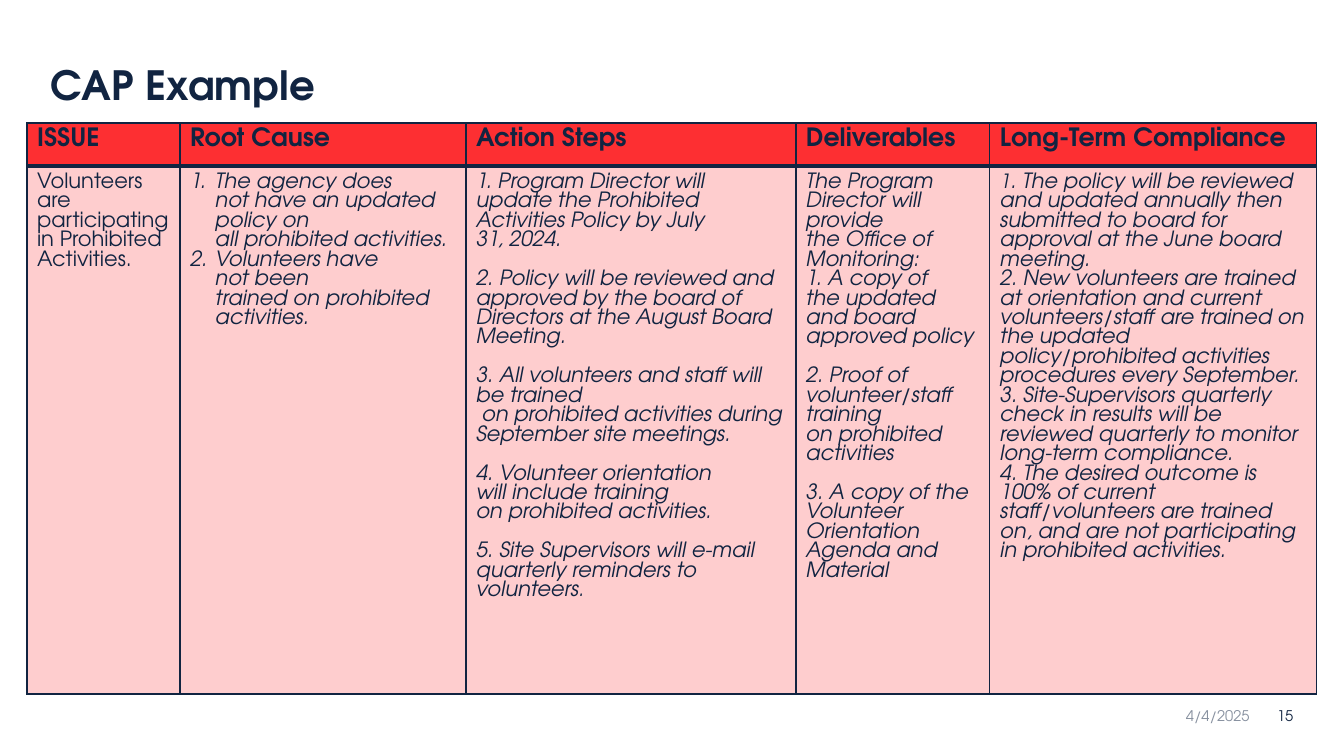
from lxml import etree
from pptx import Presentation
from pptx import util as u
from pptx.dml.color import RGBColor
from pptx.enum import text
from pptx.oxml.ns import qn

PX = 12192000 / 1344
FONT = "TeX Gyre Adventor"
NAVY = RGBColor(0x11, 0x24, 0x41)
RED = RGBColor(0xFD, 0x2F, 0x32)
PINK = RGBColor(0xFE, 0xCD, 0xCE)
BODY_PITCH = u.Pt(13.9)
HEADER_PITCH = u.Pt(16.75)


def px(n):
    return u.Emu(round(n * PX))


def add_run(p, words, size, bold=False, italic=False):
    """Add a run to p; ~ in words stands for a no-break space."""
    r = p.add_run()
    r.text = words.replace("~", chr(160))
    r.font.name = FONT
    r.font.size = u.Pt(size)
    r.font.bold = bold
    r.font.italic = italic
    r.font.color.rgb = NAVY
    return r


prs = Presentation()
prs.slide_width, prs.slide_height = px(1344), px(756)
s = prs.slides.add_slide(prs.slide_layouts[6])

# Title, date and slide number
labels = [
    ("CAP Example", 28.8, True, (51, 62, 670, 47), 0, text.MSO_ANCHOR.BOTTOM),
    ("4/4/2025", 10.5, False, (1176, 708, 92, 15), 10, text.MSO_ANCHOR.MIDDLE),
    ("15", 10.5, False, (1268, 708, 36, 15), 9, text.MSO_ANCHOR.MIDDLE),
]
for words, size, bold, box, inset, anchor in labels:
    tf = s.shapes.add_textbox(*map(px, box)).text_frame
    tf.word_wrap = True
    tf.vertical_anchor = anchor
    tf.margin_left = px(inset)
    tf.margin_right = tf.margin_top = tf.margin_bottom = 0
    p = tf.paragraphs[0]
    r = add_run(p, words, size, bold)
    if bold:
        p.line_spacing = 0.9
    if words == "4/4/2025":
        color = r.font.fill._xPr.find(qn("a:solidFill"))[0]
        etree.SubElement(color, qn("a:alpha"), val="50000")

# Each column: heading, width, body paragraphs.
# A leading + sets a paragraph one line apart; text between ^ marks is 14 pt.
columns = [
    ("ISSUE", 153, ["Volunteers are participating in Prohibited Activities."]),
    ("Root Cause", 286, [
        "The agency does not~been".replace("~been", "~have an~updated policy~on all~prohibited~activities.~"),
        "Volunteers have not~been trained~on~prohibited activities.",
    ]),
    ("Action Steps", 330, [
        "1. Program Director will update the~Prohibited Activities Policy by July 31,~2024.~",
        "+2. Policy will be reviewed and approved by the board of Directors at the August Board Meeting.",
        "+3. All volunteers and staff will be trained",
        " on~prohibited activities during September~site meetings.~",
        "+4. Volunteer orientation will~include training on~prohibited activities.",
        "+5. Site Supervisors will e-mail quarterly~reminders to volunteers^.^",
    ]),
    ("Deliverables", 194, [
        "The Program Director will provide the~Office of Monitoring:",
        "1. A copy of the~updated and board approved policy",
        "+2. Proof of volunteer/staff training on~prohibited activities",
        "+3. A copy of the Volunteer Orientation Agenda and Material",
    ]),
    ("Long-Term Compliance", 327, [
        "^1^. The policy will be reviewed and updated annually then submitted to board "
        "for approval at the June board meeting.",
        "2. New volunteers are trained at orientation and current volunteers/staff are trained "
        "on the updated policy/prohibited activities procedures every September.",
        "3. Site-Supervisors quarterly check in results will be reviewed quarterly "
        "to monitor long-term compliance.",
        "4. The desired outcome is 100% of current staff/volunteers are trained on, "
        "and are not participating in prohibited activities.~",
    ]),
]

table_width = sum(width for _, width, _ in columns)
table = s.shapes.add_table(2, len(columns), px(27), px(123), px(table_width), px(571)).table
table.rows[0].height, table.rows[1].height = px(43), px(528)

for c, (heading, width, paragraphs) in enumerate(columns):
    table.columns[c].width = px(width)
    header, body = table.cell(0, c), table.cell(1, c)

    p = header.text_frame.paragraphs[0]
    p.line_spacing = HEADER_PITCH
    add_run(p, heading, 18, bold=True)

    body.margin_top = px(7)
    tf = body.text_frame
    for i, words in enumerate(paragraphs):
        p = tf.paragraphs[0] if i == 0 else tf.add_paragraph()
        p.line_spacing = BODY_PITCH
        if words.startswith("+"):
            p.space_before = BODY_PITCH
        if heading == "Root Cause":
            pPr = p._p.get_or_add_pPr()
            pPr.set("marL", "228600")
            pPr.set("indent", "-228600")
            etree.SubElement(pPr, qn("a:buFont"), typeface="+mj-lt")
            etree.SubElement(pPr, qn("a:buAutoNum"), type="arabicPeriod")
        for k, piece in enumerate(words.lstrip("+").split("^")):
            if piece:
                add_run(p, piece, 14 if k % 2 else 15, italic=c > 0)

    for cell, fill, bottom in ((header, RED, 3), (body, PINK, 1)):
        tcPr = cell._tc.get_or_add_tcPr()
        for side, points in (("L", 1), ("R", 1), ("T", 1), ("B", bottom)):
            ln = etree.SubElement(tcPr, qn(f"a:ln{side}"), w=str(u.Pt(points)))
            solid = etree.SubElement(ln, qn("a:solidFill"))
            etree.SubElement(solid, qn("a:srgbClr"), val=str(NAVY))
        cell.fill.solid()
        cell.fill.fore_color.rgb = fill

prs.save("out.pptx")
